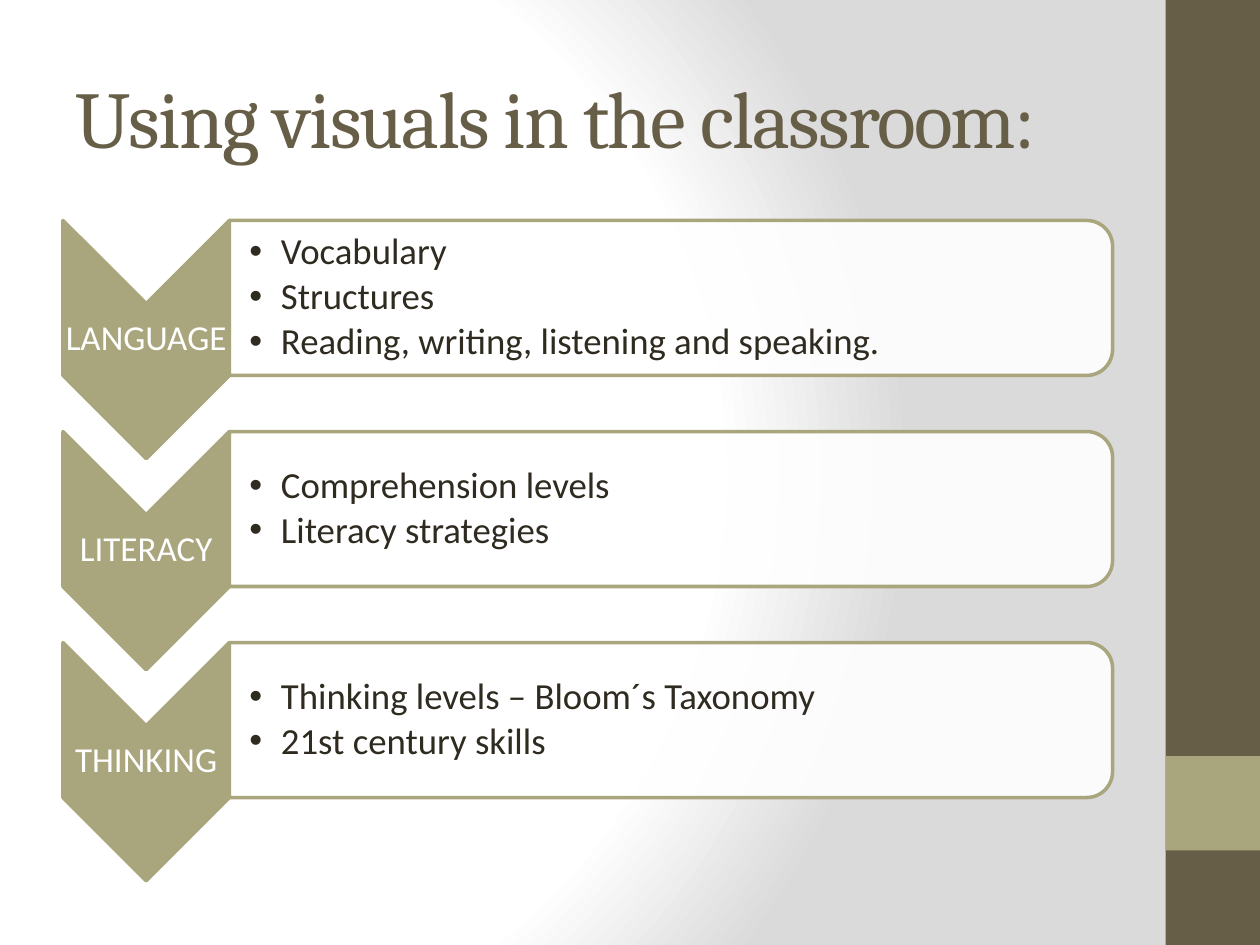
import pptx
import pptx.dml.color
import pptx.enum.shapes
import pptx.enum.text
import pptx.oxml
import pptx.oxml.ns
import pptx.util

BROWN = pptx.dml.color.RGBColor(0x67, 0x5E, 0x47)
OLIVE = pptx.dml.color.RGBColor(0xA9, 0xA5, 0x7C)
INK = pptx.dml.color.RGBColor(0x2F, 0x2B, 0x20)
WHITE = pptx.dml.color.RGBColor(0xFF, 0xFF, 0xFF)
SILVER = pptx.dml.color.RGBColor(0xDA, 0xDA, 0xDA)

COLUMNS, ROWS = 40, 30
FIRST_ROW, ROW_PITCH = 7, 6.7

SHAPES = pptx.enum.shapes.MSO_SHAPE
ALIGN = pptx.enum.text.PP_ALIGN
TITLE_FONT = {"name": "Cambria", "size": pptx.util.Pt(46)}
LABEL_FONT = {"name": "Calibri", "size": pptx.util.Pt(20)}
POINT_FONT = {"name": "Calibri", "size": pptx.util.Pt(21)}
LABEL_PARAGRAPH = {
    "alignment": ALIGN.CENTER,
    "line_spacing": 0.9,
    "space_after": pptx.util.Pt(7),
}
POINT_PARAGRAPH = {"line_spacing": 0.9, "space_after": pptx.util.Pt(3)}

TOPICS = [
    ("LANGUAGE", ["Vocabulary", "Structures",
                  "Reading, writing, listening and speaking."]),
    ("LITERACY", ["Comprehension levels", "Literacy strategies"]),
    ("THINKING", ["Thinking levels – Bloom´s Taxonomy", "21st century skills"]),
]


def apply(target, values):
    for key, value in values.items():
        setattr(target, key, value)


def add_xml(parent, tag, **attributes):
    child = pptx.oxml.parse_xml(f"<{tag} {pptx.oxml.ns.nsdecls('a')}/>")
    for key, value in attributes.items():
        child.set(key, str(value))
    parent.append(child)


class SlideBuilder:
    def __init__(self, deck):
        self.slide = deck.slides.add_slide(deck.slide_layouts[6])
        self.column = deck.slide_width / COLUMNS
        self.row = deck.slide_height / ROWS

    def box(self, left, top, width, height):
        return [round(length * unit) for length, unit in
                zip((left, top, width, height), (self.column, self.row) * 2)]

    def background(self):
        stops = "".join(
            f'<a:gs pos="{share * 1000}"><a:srgbClr val="{color}"/></a:gs>'
            for share, color in ((0, WHITE), (75, WHITE), (100, SILVER)))
        self.slide.element.cSld.insert(0, pptx.oxml.parse_xml(
            f'<p:bg {pptx.oxml.ns.nsdecls("p", "a")}><p:bgPr>'
            f'<a:gradFill rotWithShape="1"><a:gsLst>{stops}</a:gsLst>'
            '<a:path path="circle"><a:fillToRect l="20000" t="50000" '
            'r="100000" b="50000"/></a:path></a:gradFill><a:effectLst/>'
            '</p:bgPr></p:bg>'))

    def shape(self, kind, area, fill, outline=None, opacity=100, turned=False):
        left, top, width, height = self.box(*area)
        if turned:
            left, top = left + (width - height) // 2, top + (height - width) // 2
            width, height = height, width
        shape = self.slide.shapes.add_shape(kind, left, top, width, height)
        shape.rotation = 90 if turned else 0
        shape.shadow.inherit = False
        shape.fill.solid()
        shape.fill.fore_color.rgb = fill
        if opacity < 100:
            color = shape.fill._xPr.find(".//" + pptx.oxml.ns.qn("a:srgbClr"))
            add_xml(color, "a:alpha", val=opacity * 1000)
        if outline is None:
            shape.line.fill.background()
        else:
            shape.line.color.rgb = outline
            shape.line.width = pptx.util.Pt(2)

    def text(self, lines, area, font, color, paragraph_format=None,
             insets=None, tracking=0, bulleted=False):
        frame = self.slide.shapes.add_textbox(*self.box(*area)).text_frame
        frame.word_wrap = True
        frame.vertical_anchor = pptx.enum.text.MSO_ANCHOR.MIDDLE
        if insets:
            sides = ("left", "top", "right", "bottom")
            apply(frame, {f"margin_{side}": pptx.util.Inches(inset)
                          for side, inset in zip(sides, insets)})
        frame.text = "\n".join(lines)
        for paragraph in frame.paragraphs:
            apply(paragraph, paragraph_format or {})
            run = paragraph.runs[0]
            apply(run.font, font)
            run.font.color.rgb = color
            if tracking:
                run.font._element.set("spc", str(tracking * 100))
            if bulleted:
                properties = paragraph._p.get_or_add_pPr()
                indent = pptx.util.Inches(0.25)
                properties.set("marL", str(indent))
                properties.set("indent", str(-indent))
                add_xml(properties, "a:buFont", typeface="Arial")
                add_xml(properties, "a:buChar", char="•")

    def topic(self, index, label, points):
        top = FIRST_ROW + index * ROW_PITCH
        self.shape(SHAPES.CHEVRON, (2, top, 5.28, 7.56), OLIVE, OLIVE, turned=True)
        self.text([label], (2, top + 2.64, 5.28, 2.28), LABEL_FONT, WHITE,
                  LABEL_PARAGRAPH, (0.01,) * 4)
        self.shape(SHAPES.ROUND_2_SAME_RECTANGLE, (7.28, top, 28.04, 4.92),
                   WHITE, OLIVE, opacity=90, turned=True)
        self.text(points, (7.28, top + 0.24, 27.8, 4.44), POINT_FONT, INK,
                  POINT_PARAGRAPH, (0.16, 0.01, 0.01, 0.01), bulleted=True)


def main():
    deck = pptx.Presentation()
    deck.slide_width = pptx.util.Inches(10)
    deck.slide_height = pptx.util.Inches(7.5)
    builder = SlideBuilder(deck)
    builder.background()
    builder.shape(SHAPES.RECTANGLE, (37, 0, 3, ROWS), BROWN)
    builder.shape(SHAPES.RECTANGLE, (37, 24, 3, 3), OLIVE)
    builder.text(["Using visuals in the classroom:"], (2, 1.2, 33.32, 5),
                 TITLE_FONT, BROWN, tracking=-1)
    for index, (label, points) in enumerate(TOPICS):
        builder.topic(index, label, points)
    deck.save("out.pptx")


if __name__ == "__main__":
    main()
